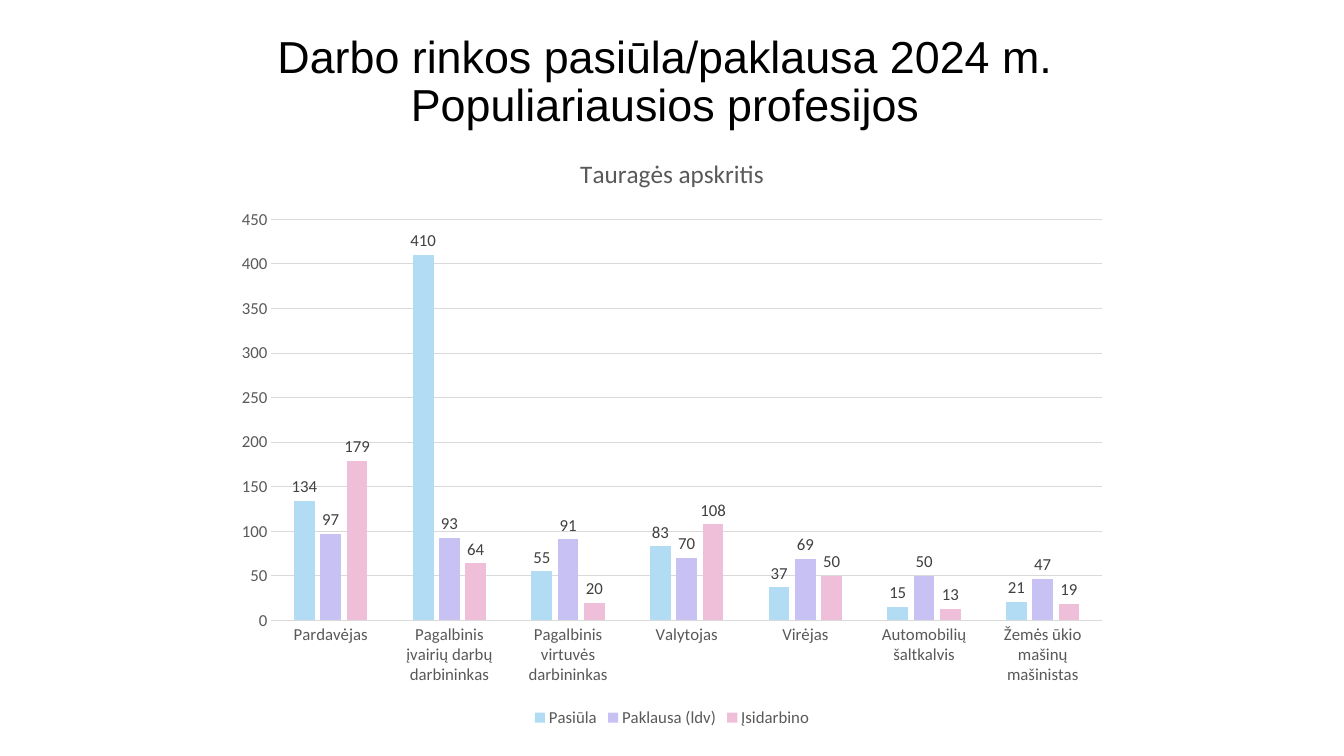
from pptx import Presentation
from pptx import util as u
from pptx.chart.data import CategoryChartData
from pptx.dml.color import RGBColor
from pptx.enum import chart as charts, text

SLIDE_WIDTH, SLIDE_HEIGHT = u.Inches(13.33), u.Inches(7.5)
TITLE_LINES = ["Darbo rinkos pasiūla/paklausa 2024 m.", "Populiariausios profesijos"]
PROFESSIONS = [
    "Pardavėjas",
    "Pagalbinis įvairių darbų darbininkas",
    "Pagalbinis virtuvės darbininkas",
    "Valytojas",
    "Virėjas",
    "Automobilių šaltkalvis",
    "Žemės ūkio mašinų mašinistas",
]
SERIES = [
    ("Pasiūla", "B2DBF4", [134, 410, 55, 83, 37, 15, 21]),
    ("Paklausa (ldv)", "C7C1F4", [97, 93, 91, 70, 69, 50, 47]),
    ("Įsidarbino", "EFBFD9", [179, 64, 20, 108, 50, 13, 19]),
]
GREY, LABEL_GREY, GRID_GREY = "595959", "404040", "D9D9D9"


def color(hex_code):
    return RGBColor.from_string(hex_code)


def share_box(left, top, width, height):
    """Turn shares of the slide's size into left, top, width, height."""
    return (int(left * SLIDE_WIDTH), int(top * SLIDE_HEIGHT),
            int(width * SLIDE_WIDTH), int(height * SLIDE_HEIGHT))


def style_font(font, name, size, hex_code):
    font.name, font.size, font.bold = name, u.Pt(size), False
    font.color.rgb = color(hex_code)


def style_line(line, hex_code):
    line.color.rgb = color(hex_code)
    line.width = u.Pt(0.75)


def add_title(slide, box):
    frame = slide.shapes.add_textbox(*box).text_frame
    frame.word_wrap = True
    frame.vertical_anchor = text.MSO_ANCHOR.MIDDLE
    paragraph = frame.paragraphs[0]
    paragraph.alignment = text.PP_ALIGN.CENTER
    paragraph.line_spacing = 0.9
    for index, line in enumerate(TITLE_LINES):
        if index:
            paragraph.add_line_break()
        run = paragraph.add_run()
        run.text = line
        style_font(run.font, "Arial", 32, "000000")


def style_axes(chart):
    for axis in (chart.category_axis, chart.value_axis):
        axis.major_tick_mark = axis.minor_tick_mark = charts.XL_TICK_MARK.NONE
        style_font(axis.tick_labels.font, "Calibri", 12, GREY)
    style_line(chart.category_axis.format.line, GRID_GREY)
    values = chart.value_axis
    values.format.line.fill.background()
    values.minimum_scale, values.maximum_scale, values.major_unit = 0, 450, 50
    style_line(values.major_gridlines.format.line, GRID_GREY)


def style_series(plot):
    plot.gap_width, plot.overlap = 219, -27
    plot.vary_by_categories = False
    for series, (_, fill, _) in zip(plot.series, SERIES):
        series.format.fill.solid()
        series.format.fill.fore_color.rgb = color(fill)
        labels = series.data_labels
        labels.show_value = True
        labels.position = charts.XL_LABEL_POSITION.OUTSIDE_END
        style_font(labels.font, "Calibri", 12, LABEL_GREY)


def add_profession_chart(slide, box):
    data = CategoryChartData()
    data.categories = PROFESSIONS
    for name, _, values in SERIES:
        data.add_series(name, values)
    chart = slide.shapes.add_chart(
        charts.XL_CHART_TYPE.COLUMN_CLUSTERED, *box, data).chart
    style_font(chart.font, "Calibri", 10, "000000")

    chart.has_title = True
    chart.chart_title.include_in_layout = False
    run = chart.chart_title.text_frame.paragraphs[0].add_run()
    run.text = "Tauragės apskritis"
    style_font(run.font, "Calibri", 18, GREY)

    chart.has_legend = True
    chart.legend.position = charts.XL_LEGEND_POSITION.BOTTOM
    chart.legend.include_in_layout = False
    style_font(chart.legend.font, "Calibri", 12, GREY)

    style_axes(chart)
    style_series(chart.plots[0])


def main():
    presentation = Presentation()
    presentation.slide_width, presentation.slide_height = SLIDE_WIDTH, SLIDE_HEIGHT
    slide = presentation.slides.add_slide(presentation.slide_layouts[6])
    add_profession_chart(slide, share_box(1 / 6, 8 / 45, 2 / 3, 0.79))
    add_title(slide, share_box(0, 0.015, 0.99, 0.19))
    presentation.save("out.pptx")


if __name__ == "__main__":
    main()
